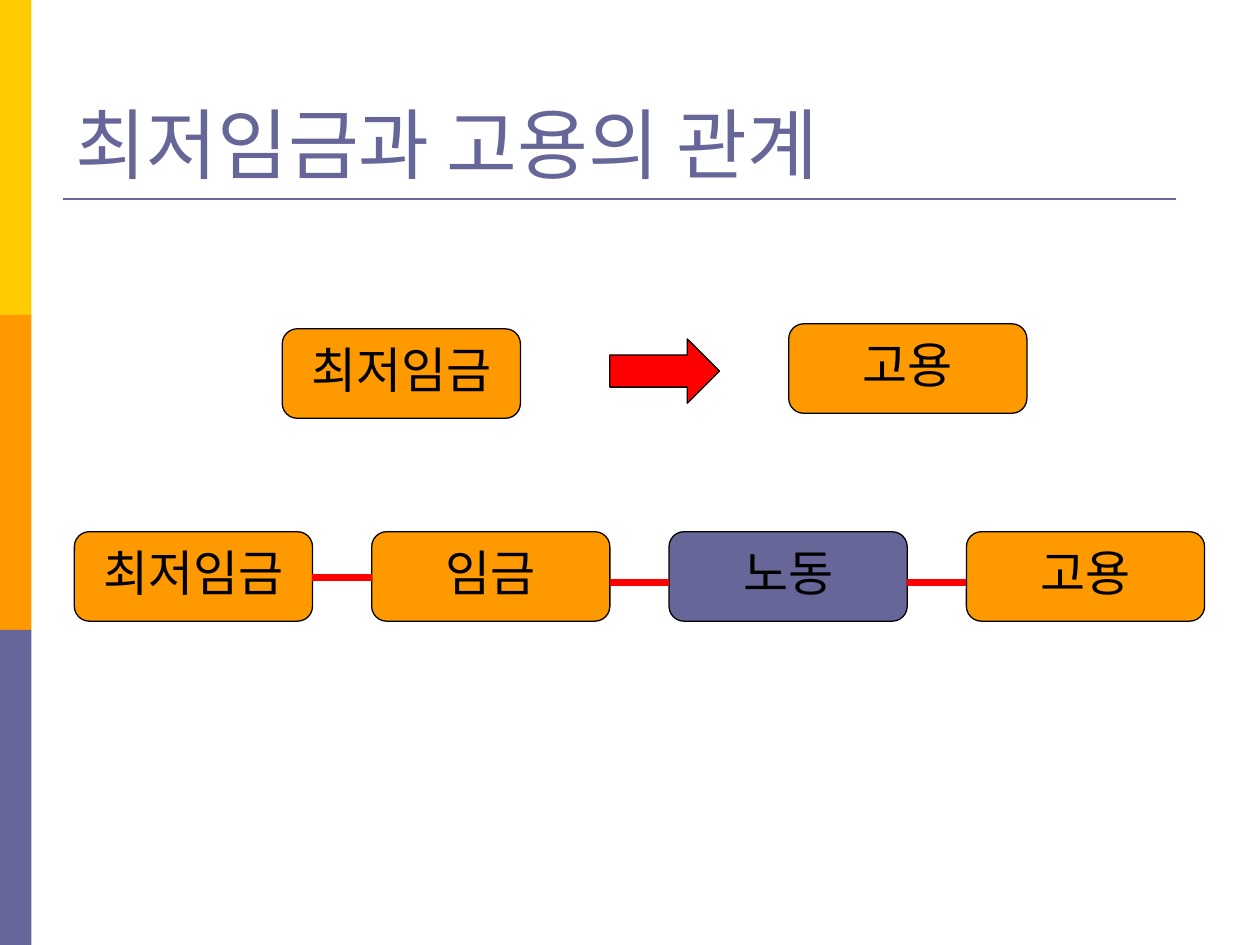
"""Build a slide on how the minimum wage relates to employment."""
from lxml import etree
from pptx import Presentation
from pptx.dml.color import RGBColor
from pptx.enum import shapes, text
from pptx.oxml.ns import qn
from pptx.util import Inches, Pt

YELLOW = RGBColor(0xFF, 0xCC, 0x00)
ORANGE = RGBColor(0xFF, 0x99, 0x00)
PURPLE = RGBColor(0x66, 0x66, 0x99)
RED = RGBColor(0xFF, 0x00, 0x00)
BLACK = RGBColor(0x00, 0x00, 0x00)
STEP_WIDTH, STEP_HEIGHT = 1.89, 0.71
CHAIN_LEFT, CHAIN_TOP, CHAIN_PITCH = 0.59, 4.22, 2.36


def add_block(kind, left, top, width, height, fill, outlined=True):
    block = slide.shapes.add_shape(
        kind, Inches(left), Inches(top), Inches(width), Inches(height))
    block.shadow.inherit = False
    block.fill.solid()
    block.fill.fore_color.rgb = fill
    if outlined:
        block.line.color.rgb = BLACK
        block.line.width = Pt(0.75)
    else:
        block.line.fill.background()
    return block


def add_rule(left, right, y, color, weight):
    rule = slide.shapes.add_connector(
        shapes.MSO_CONNECTOR.STRAIGHT, Inches(left), Inches(y), Inches(right), Inches(y))
    rule.line.color.rgb = color
    rule.line.width = Pt(weight)
    etree.SubElement(rule._element.spPr, qn("a:effectLst"))


deck = Presentation()
deck.slide_width, deck.slide_height = Inches(10), Inches(7.5)
slide = deck.slides.add_slide(deck.slide_layouts[5])

for row, color in enumerate([YELLOW, ORANGE, PURPLE]):
    add_block(shapes.MSO_SHAPE.RECTANGLE, 0, row * 2.5, 0.25, 2.5, color, outlined=False)
add_rule(0.5, 9.33, 1.58, PURPLE, 1.5)

title = slide.shapes.title
title.left, title.top = Inches(0.5), Inches(0.3)
title.width, title.height = Inches(9), Inches(1.25)
title.text_frame.text = "최저임금과 고용의 관계"
title.text_frame.vertical_anchor = text.MSO_ANCHOR.BOTTOM
heading = title.text_frame.paragraphs[0]
heading.alignment = text.PP_ALIGN.LEFT
heading.font.size = Pt(44)
heading.font.name = "Times New Roman"
heading.font.color.rgb = PURPLE

steps = [("최저임금", 2.24, 2.61, ORANGE), ("고용", 6.26, 2.57, ORANGE)]
chain = [("최저임금", ORANGE), ("임금", ORANGE), ("노동", PURPLE), ("고용", ORANGE)]
for place, (label, fill) in enumerate(chain):
    steps.append((label, CHAIN_LEFT + place * CHAIN_PITCH, CHAIN_TOP, fill))

for label, left, top, fill in steps:
    step = add_block(
        shapes.MSO_SHAPE.ROUNDED_RECTANGLE, left, top, STEP_WIDTH, STEP_HEIGHT, fill)
    step.text_frame.text = label
    step.text_frame.vertical_anchor = text.MSO_ANCHOR.TOP
    caption = step.text_frame.paragraphs[0]
    caption.alignment = text.PP_ALIGN.CENTER
    caption.font.size = Pt(28)
    caption.font.name = "Arial"
    caption.font.color.rgb = BLACK

add_block(shapes.MSO_SHAPE.RIGHT_ARROW, 4.84, 2.69, 0.87, 0.51, RED)

for place, y in enumerate([4.58, 4.62, 4.62]):
    link_left = CHAIN_LEFT + place * CHAIN_PITCH + STEP_WIDTH
    add_rule(link_left, link_left + CHAIN_PITCH - STEP_WIDTH, y, RED, 4)

deck.save("out.pptx")
